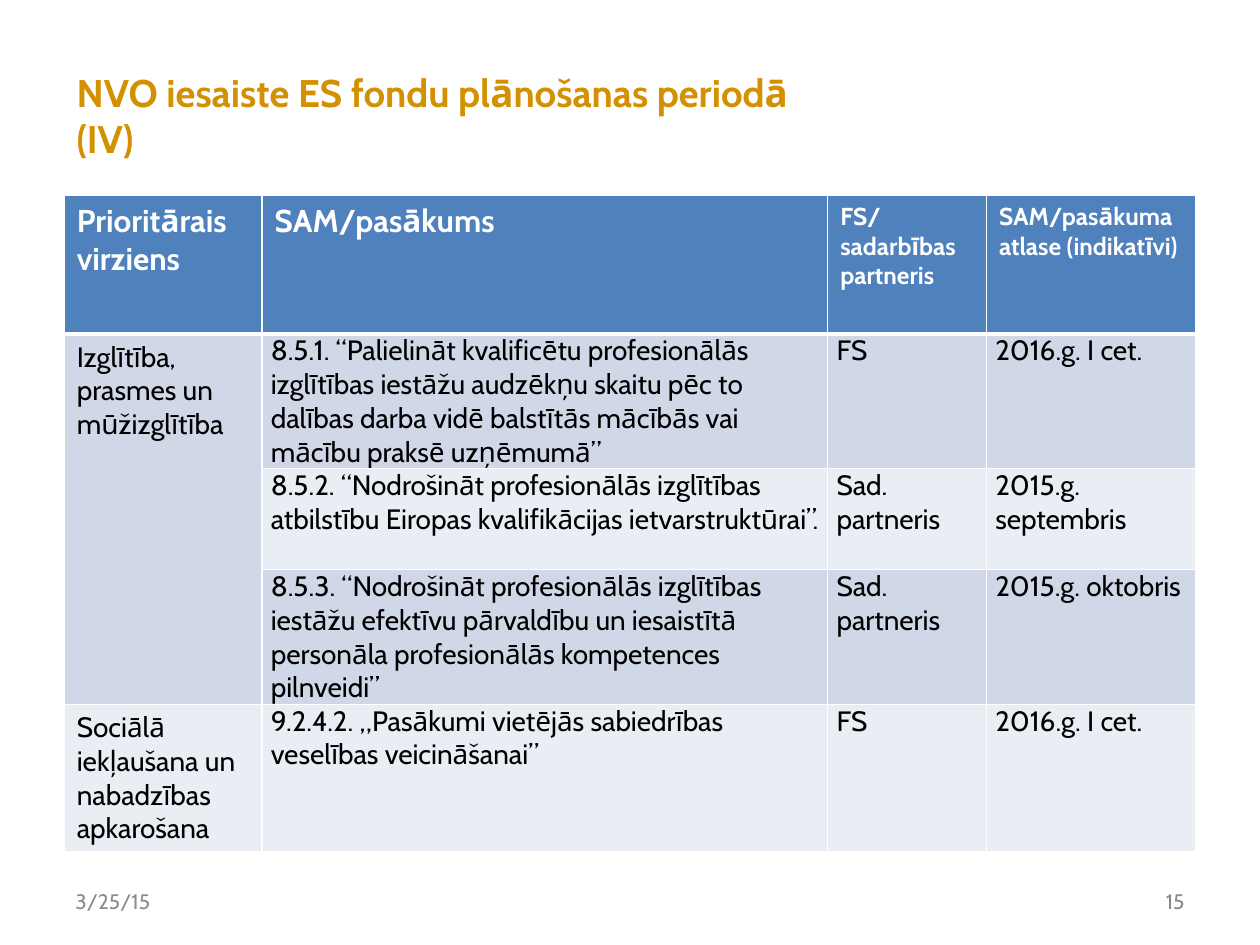
from lxml.etree import SubElement as Sub
from pptx import Presentation
from pptx.dml.color import RGBColor as Rgb
from pptx.enum.text import MSO_ANCHOR as Anchor, PP_ALIGN as Align
from pptx.oxml.ns import qn
from pptx.util import Inches, Pt

FONT = "Cabin"
COLORS = {"title": "D39001", "date": "8C8C8C", "page": "898989",
          "head": "4F81BD", "dark": "D0D8E8", "light": "E9EDF4",
          "white": "FFFFFF", "black": "000000"}
COLS = [1.57, 4.49, 1.26, 1.66]
ROWS = [1.1, 1.07, 0.8, 1.07, 1.17]
BANDS = ["head", "dark", "light", "dark", "light"]
CELLS = [
    ["Prioritārais virziens", "SAM/pasākums", "FS/ sadarbības partneris",
     "SAM/pasākuma atlase (indikatīvi)"],
    ["Izglītība, prasmes un mūžizglītība",
     "8.5.1. “Palielināt kvalificētu profesionālās izglītības iestāžu audzēkņu skaitu "
     "pēc to dalības darba vidē balstītās mācībās vai mācību praksē uzņēmumā”",
     "FS", "2016.g. I cet."],
    ["",
     "8.5.2. “Nodrošināt profesionālās izglītības atbilstību Eiropas kvalifikācijas "
     "ietvarstruktūrai”.",
     "Sad. partneris", "2015.g. septembris"],
    ["",
     "8.5.3. “Nodrošināt profesionālās izglītības iestāžu efektīvu pārvaldību un "
     "iesaistītā personāla profesionālās kompetences pilnveidi”",
     "Sad. partneris", "2015.g. oktobris"],
    ["Sociālā iekļaušana un nabadzības apkarošana",
     "9.2.4.2. „Pasākumi vietējās sabiedrības veselības veicināšanai”",
     "FS", "2016.g. I cet."],
]


def style(frame, size, color, bold=False):
    for para in frame.paragraphs:
        for run in para.runs:
            run.font.name = FONT
            run.font.size = Pt(size)
            run.font.bold = bold
            run.font.color.rgb = Rgb.from_string(COLORS[color])


def add_text(slide, box, text, size, color, bold=False, align=Align.LEFT):
    frame = slide.shapes.add_textbox(*map(Inches, box)).text_frame
    frame.word_wrap = True
    frame.vertical_anchor = Anchor.MIDDLE
    frame.text = text
    frame.paragraphs[0].alignment = align
    style(frame, size, color, bold)


def set_edges(cell, base):
    props = cell._tc.get_or_add_tcPr()
    for side in "LRTB":
        width = base if side == "B" else 1
        line = Sub(props, qn(f"a:ln{side}"), w=str(Pt(width)))
        fill = Sub(line, qn("a:solidFill"))
        Sub(fill, qn("a:srgbClr"), val=COLORS["white"])


def fill_cell(cell, text, row, col):
    head = row == 0
    wide = head or col == 0
    set_edges(cell, 3 if head else 1)
    cell.fill.solid()
    cell.fill.fore_color.rgb = Rgb.from_string(COLORS[BANDS[row]])
    cell.margin_left = cell.margin_right = Inches(0.1 if wide else 0.07)
    cell.margin_top = cell.margin_bottom = Inches(0.05 if wide else 0)
    cell.text = text
    size = (18 if col < 2 else 14) if head else 16
    style(cell.text_frame, size, "white" if head else "black", head)


def add_grid(slide):
    box = map(Inches, (0.51, 1.55, sum(COLS), sum(ROWS)))
    grid = slide.shapes.add_table(len(ROWS), len(COLS), *box).table
    for col, width in zip(grid.columns, COLS):
        col.width = Inches(width)
    for row, height in zip(grid.rows, ROWS):
        row.height = Inches(height)
    for r, texts in enumerate(CELLS):
        for c, text in enumerate(texts):
            fill_cell(grid.cell(r, c), text, r, c)
    grid.cell(1, 0).merge(grid.cell(3, 0))


def main():
    deck = Presentation()
    deck.slide_width, deck.slide_height = Inches(10), Inches(7.5)
    slide = deck.slides.add_slide(deck.slide_layouts[6])
    add_text(slide, (0.51, 0.68, 6.22, 0.47),
             "NVO iesaiste ES fondu plānošanas periodā (IV)", 22, "title", True)
    add_text(slide, (0.5, 6.95, 2.33, 0.4), "3/25/15", 12, "date")
    add_text(slide, (7.17, 6.95, 2.33, 0.4), "15", 12, "page", align=Align.RIGHT)
    add_grid(slide)
    deck.save("out.pptx")


if __name__ == "__main__":
    main()
